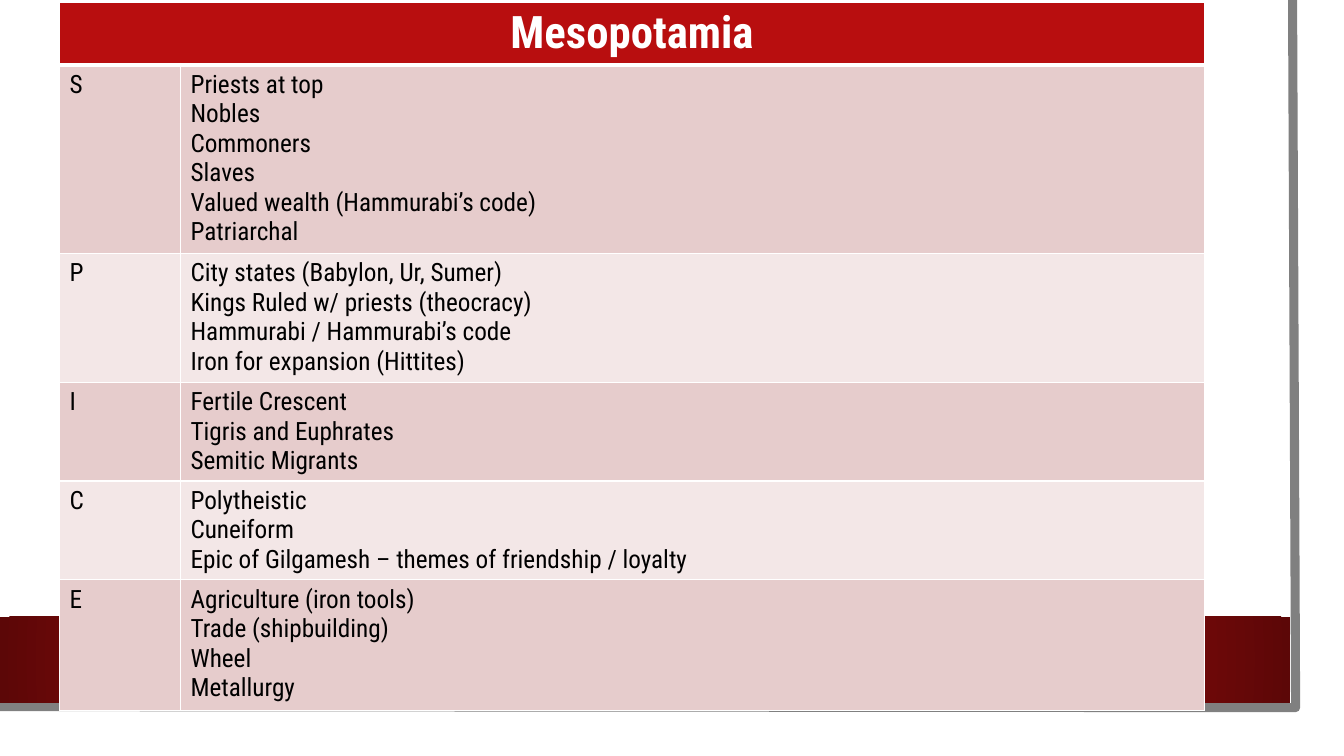
from lxml import etree
from pptx import Presentation
from pptx.dml.color import RGBColor as RGB
from pptx.enum.shapes import MSO_SHAPE as Shape
from pptx.enum.text import PP_ALIGN as Align
from pptx.oxml import parse_xml
from pptx.oxml.ns import nsdecls, qn
from pptx.util import Inches, Pt

HUES = {"red": "B80E0F", "dark": "5C0707", "rose": "E6CCCC", "pale": "F3E7E7",
        "gray": "808080", "white": "FFFFFF", "black": "000000"}
FONT = "Roboto Condensed"
TITLE = "Mesopotamia"
TOPICS = [
    ("S", 1.87, ["Priests at top", "Nobles", "Commoners", "Slaves",
                 "Valued wealth (Hammurabi’s code)", "Patriarchal"]),
    ("P", 1.28, ["City states (Babylon, Ur, Sumer)", "Kings Ruled w/ priests (theocracy)",
                 "Hammurabi / Hammurabi’s code", "Iron for expansion (Hittites)"]),
    ("I", 0.98, ["Fertile Crescent", "Tigris and Euphrates", "Semitic Migrants"]),
    ("C", 0.98, ["Polytheistic", "Cuneiform",
                 "Epic of Gilgamesh – themes of friendship / loyalty"]),
    ("E", 1.3, ["Agriculture (iron tools)", "Trade (shipbuilding)", "Wheel", "Metallurgy"]),
]


def write(cell, lines, size, hue, bold=False, align=Align.LEFT):
    frame = cell.text_frame
    for i, line in enumerate(lines):
        para = frame.add_paragraph() if i else frame.paragraphs[0]
        para.alignment = align
        run = para.add_run()
        run.text = line
        font = run.font
        font.name, font.size, font.bold = FONT, Pt(size), bold
        font.color.rgb = RGB.from_string(HUES[hue])


def paint(cell, hue, base=1):
    # Borders come before the fill in the cell properties
    props = cell._tc.get_or_add_tcPr()
    for side in "LRTB":
        width = Pt(base if side == "B" else 1)
        edge = etree.SubElement(props, qn(f"a:ln{side}"), w=str(width))
        solid = etree.SubElement(edge, qn("a:solidFill"))
        etree.SubElement(solid, qn("a:srgbClr"), val=HUES["white"])
    cell.fill.solid()
    cell.fill.fore_color.rgb = RGB.from_string(HUES[hue])


deck = Presentation()
deck.slide_width, deck.slide_height = Inches(13.33), Inches(7.5)
slide = deck.slides.add_slide(deck.slide_layouts[6])
shapes = slide.shapes

# White sheet
sheet = shapes.add_shape(Shape.RECTANGLE, 0, 0, Inches(13.1), Inches(7.27))
sheet.shadow.inherit = False
sheet.fill.solid()
sheet.fill.fore_color.rgb = RGB.from_string(HUES["white"])
sheet.line.fill.background()

# Gray edge along the right and bottom
pen = shapes.build_freeform(Inches(12.82), 0)
pen.add_line_segments([(Inches(12.85), Inches(7.02)), (Inches(-0.03), Inches(7.01))], close=False)
edge = pen.convert_to_shape()
edge.shadow.inherit = False
edge.fill.background()
edge.line.color.rgb = RGB.from_string(HUES["gray"])
edge.line.width = Pt(6.5)

# Red band with a round gradient
band = shapes.add_shape(Shape.RECTANGLE, 0, Inches(6.12), Inches(12.8), Inches(0.85))
band.shadow.inherit = False
band.line.fill.background()
band._element.spPr.find(qn("a:prstGeom")).addnext(parse_xml(
    f'<a:gradFill {nsdecls("a")} rotWithShape="1"><a:gsLst>'
    f'<a:gs pos="34000"><a:srgbClr val="{HUES["red"]}"/></a:gs>'
    f'<a:gs pos="100000"><a:srgbClr val="{HUES["dark"]}"/></a:gs></a:gsLst>'
    '<a:path path="circle"><a:fillToRect l="50000" t="50000" r="50000" b="50000"/></a:path>'
    '</a:gradFill>'))

# Table frame
grid = shapes.add_table(len(TOPICS) + 1, 2, Inches(0.59), Inches(0.02),
                        Inches(11.36), Inches(7.03)).table
for col, width in zip(grid.columns, (1.2, 10.16)):
    col.width = Inches(width)

# Header
grid.rows[0].height = Inches(0.62)
for cell in grid.rows[0].cells:
    paint(cell, "red", 3)
head = grid.cell(0, 0)
head.merge(grid.cell(0, 1))
write(head, [TITLE], 32, "white", True, Align.CENTER)

# Topic rows in alternating tints
for i, (mark, height, lines) in enumerate(TOPICS, 1):
    grid.rows[i].height = Inches(height)
    for cell, text in zip(grid.rows[i].cells, ([mark], lines)):
        paint(cell, "rose" if i % 2 else "pale")
        write(cell, text, 18, "black")

deck.save("out.pptx")
